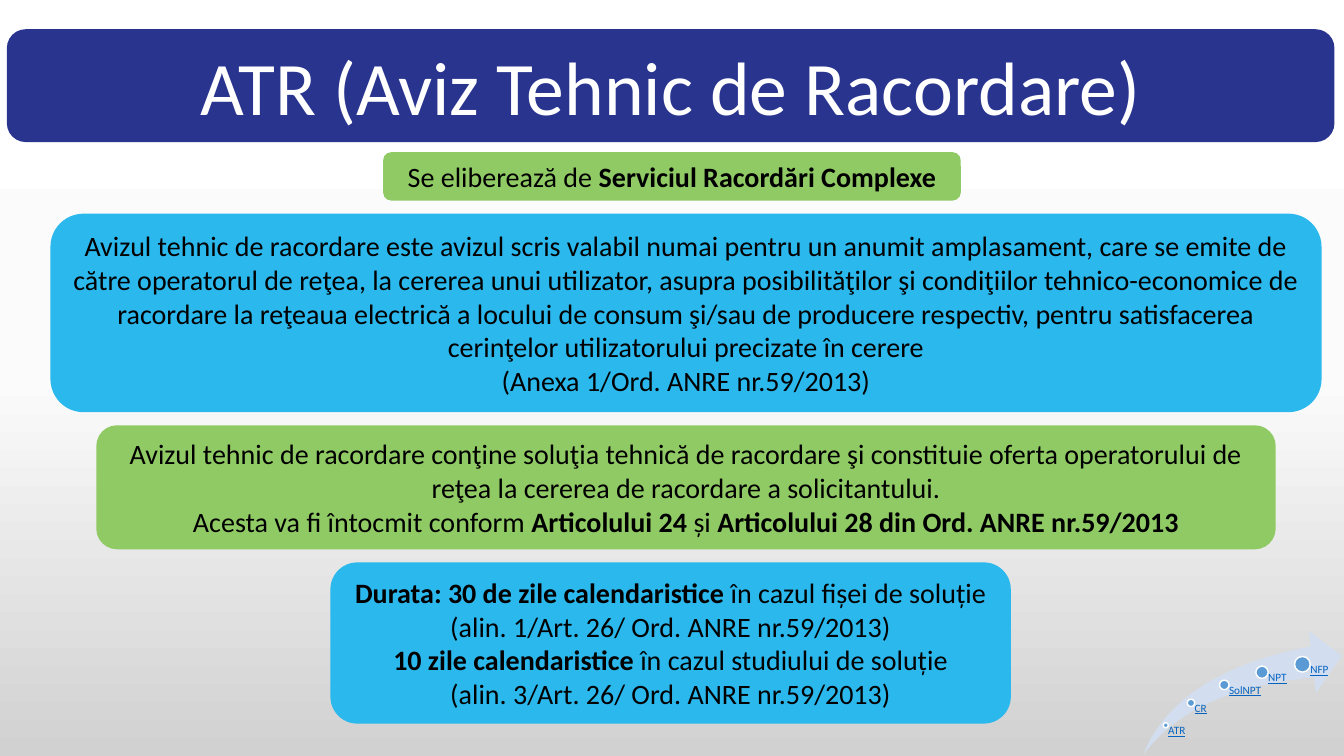
"""Build the slide on the ATR grid connection approval."""
from copy import deepcopy

from pptx import Presentation
from pptx.dml.color import RGBColor
from pptx.enum.shapes import MSO_SHAPE
from pptx.enum.text import MSO_ANCHOR, MSO_AUTO_SIZE, PP_ALIGN
from pptx.util import Inches, Pt

NAVY = RGBColor(0x29, 0x34, 0x8F)
GREEN = RGBColor(0x90, 0xCA, 0x65)
CYAN = RGBColor(0x2B, 0xB8, 0xED)
BLACK = RGBColor(0x00, 0x00, 0x00)
WHITE = RGBColor(0xFF, 0xFF, 0xFF)
PALE_BLUE = RGBColor(0xD2, 0xDE, 0xEF)
DOT_BLUE = RGBColor(0x5B, 0x9B, 0xD5)
LINK_BLUE = RGBColor(0x05, 0x63, 0xC1)
BACKDROP = [(0, WHITE), (0.5, RGBColor(0xFB, 0xFB, 0xFB)), (1, RGBColor(0xD1, 0xD1, 0xD1))]
FONT = "Calibri"

# Each panel: gap above, height, centre and width in percent of the slide, fill,
# text colour, size, then paragraphs of (text, bold) runs.
PANELS = [
    (3.87, 14.93, 49.9, 98.78, NAVY, WHITE, 54, [
        [("ATR (Aviz Tehnic de Racordare)", False)],
    ]),
    (1.33, 6.4, 50, 42.98, GREEN, BLACK, 20, [
        [("Se eliberează de ", False), ("Serviciul Racordări Complexe", True)],
    ]),
    (1.73, 26.27, 51.04, 94.58, CYAN, BLACK, 20, [
        [("Avizul tehnic de racordare este avizul scris valabil numai pentru un anumit "
          "amplasament, care se emite de către operatorul de reţea, la cererea unui "
          "utilizator, asupra posibilităţilor şi condiţiilor tehnico-economice de "
          "racordare la reţeaua electrică a locului de consum şi/sau de producere "
          "respectiv, pentru satisfacerea cerinţelor utilizatorului precizate în cerere",
          False)],
        [("(Anexa 1/Ord. ANRE nr.59/2013)", False)],
    ]),
    (1.73, 16.4, 51.04, 87.75, GREEN, BLACK, 20, [
        [("Avizul tehnic de racordare conţine soluţia tehnică de racordare şi constituie "
          "oferta operatorului de reţea la cererea de racordare a solicitantului.", False)],
        [("Acesta va fi întocmit conform ", False), ("Articolului 24 ", True),
         ("și ", False), ("Articolului 28 din Ord. ANRE nr.59/2013", True)],
    ]),
    (1.73, 21.33, 49.9, 50.63, CYAN, BLACK, 20, [
        [("Durata: 30 de zile calendaristice ", True), ("în cazul fișei de soluție", False)],
        [("(alin. 1/Art. 26/ Ord. ANRE nr.59/2013)", False)],
        [("10 zile calendaristice ", True), ("în cazul studiului de soluție", False)],
        [("(alin. 3/Art. 26/ Ord. ANRE nr.59/2013)", False)],
    ]),
]

ROUTE = (85.05, 83.47, 14.78, 16.4)
# Each step: name, dot centre x and y, dot diameter, label width, in percent of the route.
STEPS = [
    ("ATR", 11.4, 76, 2.5, 13.1),
    ("CR", 24.1, 58, 3.7, 16.7),
    ("SolNPT", 40.9, 43.5, 4.8, 19.2),
    ("NPT", 59.9, 33.3, 6.2, 20),
    ("NFP", 80.2, 26.8, 7.9, 20),
]


def add_filled(shapes, preset, box, fill, outline=None):
    """Add a flat preset shape with an optional thin outline."""
    shape = shapes.add_shape(preset, *map(int, box))
    shape.shadow.inherit = False
    shape.fill.solid()
    shape.fill.fore_color.rgb = fill
    if outline is None:
        shape.line.fill.background()
    else:
        shape.line.color.rgb = outline
        shape.line.width = Pt(1)
    return shape


def style(paragraph, size, color):
    """Set the shared font of a paragraph."""
    paragraph.font.name = FONT
    paragraph.font.size = Pt(size)
    paragraph.font.color.rgb = color


def paint_backdrop(slide):
    """Give the slide its vertical three-stop gradient."""
    fill = slide.background.fill
    fill.gradient()
    fill.gradient_angle = 270
    stop_list = slide.element.xpath(".//a:gsLst")[0]
    stop_list.append(deepcopy(stop_list[-1]))
    for stop, (position, color) in zip(fill.gradient_stops, BACKDROP):
        stop.position = position
        stop.color.rgb = color


def add_panels(slide, across, down):
    """Stack the rounded panels from top to bottom."""
    top = 0
    for gap, height, centre, width, fill, color, size, paragraphs in PANELS:
        top += gap
        box = ((centre - width / 2) * across, top * down, width * across, height * down)
        top += height
        frame = add_filled(slide.shapes, MSO_SHAPE.ROUNDED_RECTANGLE, box, fill).text_frame
        frame.word_wrap = True
        frame.auto_size = MSO_AUTO_SIZE.SHAPE_TO_FIT_TEXT
        frame.vertical_anchor = MSO_ANCHOR.MIDDLE
        for index, runs in enumerate(paragraphs):
            paragraph = frame.add_paragraph() if index else frame.paragraphs[0]
            paragraph.alignment = PP_ALIGN.CENTER
            style(paragraph, size, color)
            for text, bold in runs:
                run = paragraph.add_run()
                run.text = text
                run.font.bold = bold


def add_route(slide, across, down):
    """Draw the curved arrow with its steps."""
    left, top, width, height = (share * unit for share, unit in zip(ROUTE, (across, down) * 2))
    route = slide.shapes.add_group_shape().shapes
    swoosh = add_filled(route, MSO_SHAPE.SWOOSH_ARROW, (left, top, width, height), PALE_BLUE)
    swoosh.adjustments[0] = swoosh.adjustments[1] = 0.25
    for name, x, y, diameter, label_width in STEPS:
        centre_x, centre_y = left + x * width / 100, top + y * height / 100
        radius = diameter * width / 200
        dot = (centre_x - radius, centre_y - radius, 2 * radius, 2 * radius)
        add_filled(route, MSO_SHAPE.OVAL, dot, DOT_BLUE, WHITE)
        label_box = (centre_x, centre_y, label_width * width / 100, top + height - centre_y)
        label = route.add_textbox(*map(int, label_box)).text_frame
        label.word_wrap = True
        label.margin_left = int(radius)
        label.margin_top = label.margin_right = label.margin_bottom = 0
        paragraph = label.paragraphs[0]
        paragraph.text = name
        paragraph.line_spacing = 0.9
        style(paragraph, 8, LINK_BLUE)
        paragraph.font.underline = True


def main():
    """Build and save the slide."""
    deck = Presentation()
    deck.slide_width, deck.slide_height = Inches(13.33), Inches(7.5)
    across, down = deck.slide_width / 100, deck.slide_height / 100
    slide = deck.slides.add_slide(deck.slide_layouts[6])
    paint_backdrop(slide)
    add_panels(slide, across, down)
    add_route(slide, across, down)
    deck.save("out.pptx")


if __name__ == "__main__":
    main()
